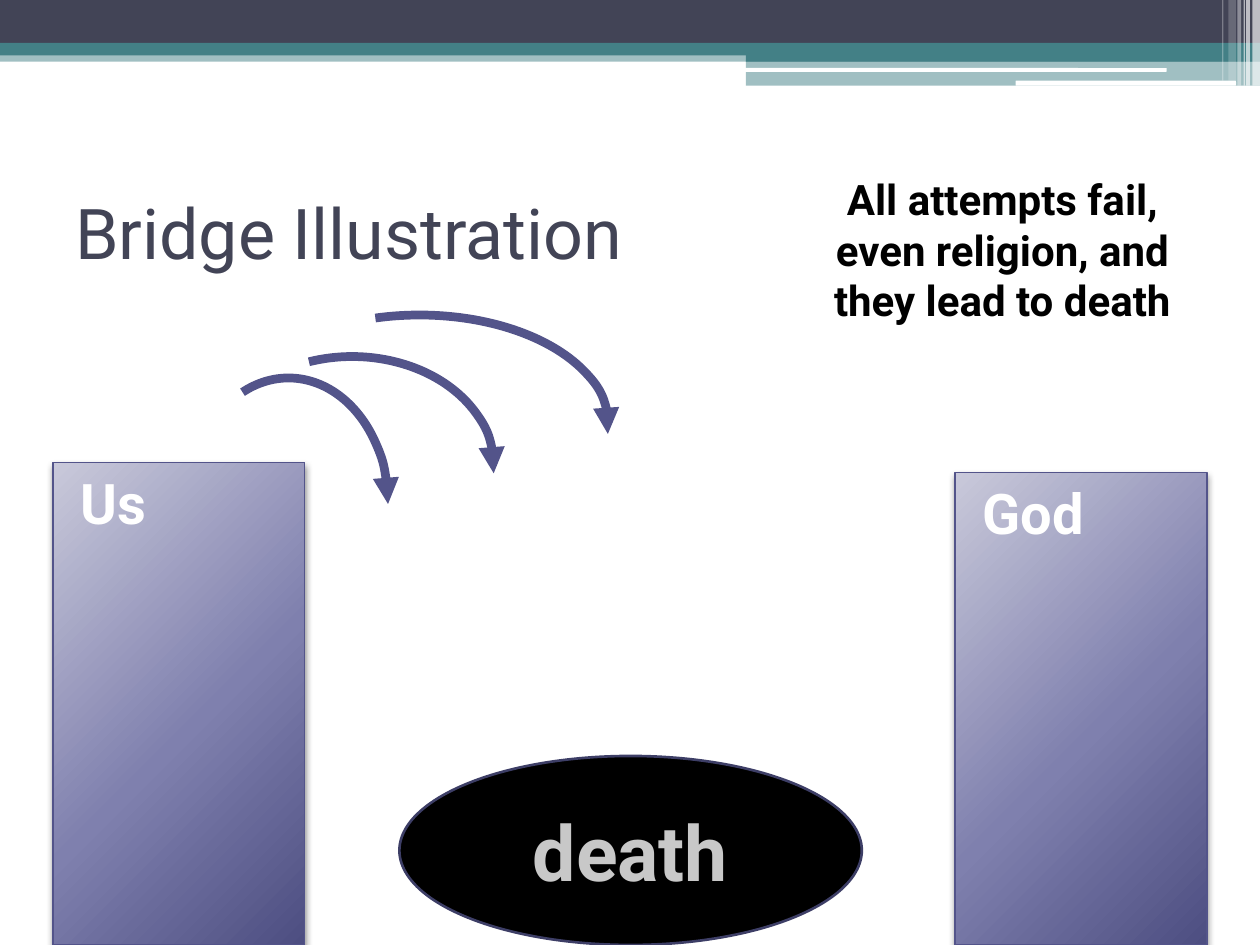
from typing import NamedTuple
from lxml.etree import SubElement
from pptx import Presentation
from pptx.dml.color import RGBColor
from pptx.enum.shapes import MSO_SHAPE as Shape
from pptx.enum.text import MSO_ANCHOR as Anchor, PP_ALIGN as Align
from pptx.oxml import parse_xml
from pptx.oxml.ns import nsdecls, qn
from pptx.util import Inches, Pt

FONT = "Roboto"
HEX = {
    "white": "FFFFFF", "black": "000000", "navy": "424456", "teal": "438086",
    "pale": "C9C9DA", "mid": "7F80AE", "deep": "4D4E81", "edge": "53548A",
    "rim": "3D3E66", "grey": "C8C8C8",
}


class Box(NamedTuple):
    left: float
    top: float
    width: float
    height: float


class Band(NamedTuple):
    box: Box
    color: str
    alpha: int = 100
    kind: Shape = Shape.RECTANGLE


class Arc(NamedTuple):
    box: Box
    end: float


class Cliff(NamedTuple):
    box: Box
    label: str


BANDS = [
    Band(Box(0, 0.4, 10, 0.09), "teal", 50),
    Band(Box(0, 0, 10, 0.34), "navy"),
    Band(Box(0, 0.34, 10, 0.1), "teal"),
    Band(Box(5.92, 0.39, 4.08, 0.1), "teal"),
    Band(Box(5.92, 0.48, 4.08, 0.2), "teal", 50),
    Band(Box(5.91, 0.54, 3.35, 0.03), "white", kind=Shape.ROUNDED_RECTANGLE),
    Band(Box(8.06, 0.64, 1.75, 0.04), "white", kind=Shape.ROUNDED_RECTANGLE),
    Band(Box(9.94, 0, 0.06, 0.68), "white", 65),
    Band(Box(9.89, 0, 0.03, 0.68), "white", 65),
    Band(Box(9.87, 0, 0.01, 0.68), "white", 60),
    Band(Box(9.82, 0, 0.03, 0.68), "white", 40),
    Band(Box(9.75, 0, 0.06, 0.64), "white", 20),
    Band(Box(9.7, 0, 0.01, 0.64), "white", 30),
]
CLIFFS = [
    Cliff(Box(0.42, 3.67, 2, 3.83), "Us"),
    Cliff(Box(7.58, 3.75, 2, 3.75), "God"),
]
ARCS = [
    Arc(Box(1.5, 3, 1.58, 2), 0),
    Arc(Box(1.67, 2.83, 2.25, 1.75), 1.58),
    Arc(Box(1.83, 2.5, 3, 1.75), 1.58),
]


def rgb(name: str) -> RGBColor:
    return RGBColor.from_string(HEX[name])


def add_shape(slide, kind: Shape, box: Box, fill: str = "", line: str = "",
              weight: float = 0):
    shape = slide.shapes.add_shape(kind, *map(Inches, box))
    shape.shadow.inherit = False
    if fill:
        shape.fill.solid()
        shape.fill.fore_color.rgb = rgb(fill)
    else:
        shape.fill.background()
    if line:
        shape.line.color.rgb = rgb(line)
        shape.line.width = Pt(weight)
    else:
        shape.line.fill.background()
    return shape


def set_text(shape, text: str, size: int, color: str, bold: bool = True,
             align: Align = Align.LEFT, anchor: Anchor = Anchor.TOP):
    frame = shape.text_frame
    frame.word_wrap = True
    frame.vertical_anchor = anchor
    para = frame.paragraphs[0]
    para.text = text
    para.alignment = align
    font = para.font
    font.name, font.size, font.bold = FONT, Pt(size), bold
    font.color.rgb = rgb(color)
    return para


def add_text(slide, box: Box, text: str, size: int, color: str, **style):
    label = slide.shapes.add_textbox(*map(Inches, box))
    set_text(label, text, size, color, **style)


def add_band(slide, band: Band):
    shape = add_shape(slide, band.kind, band.box, band.color)
    if band.alpha < 100:
        tint = shape.fill._xPr.find(".//" + qn("a:srgbClr"))
        SubElement(tint, qn("a:alpha"), val=str(band.alpha * 1000))


def add_cliff(slide, cliff: Cliff):
    shape = add_shape(slide, Shape.RECTANGLE, cliff.box, "mid", "edge", 0.75)
    props = shape._element.spPr
    stops = "".join(
        f'<a:gs pos="{pos * 1000}"><a:srgbClr val="{HEX[name]}"/></a:gs>'
        for pos, name in ((0, "pale"), (55, "mid"), (100, "deep")))
    props.replace(props.find(qn("a:solidFill")), parse_xml(
        f'<a:gradFill {nsdecls("a")} rotWithShape="1"><a:gsLst>{stops}</a:gsLst>'
        '<a:path path="circle"><a:fillToRect l="-40000" t="-90000" '
        'r="140000" b="190000"/></a:path></a:gradFill>'))
    props.find(qn("a:effectLst")).append(parse_xml(
        f'<a:outerShdw {nsdecls("a")} blurRad="{Pt(4)}" dist="{Pt(2)}" '
        f'dir="5400000" rotWithShape="0"><a:srgbClr val="{HEX["black"]}">'
        '<a:alpha val="45000"/></a:srgbClr></a:outerShdw>'))
    para = set_text(shape, cliff.label, 32, "white")
    para.space_before = Pt(3)
    indent = para._p.get_or_add_pPr()
    indent.set("marL", str(Inches(0.4)))
    indent.set("indent", str(Inches(-0.28)))


def add_arc(slide, arc: Arc):
    shape = add_shape(slide, Shape.ARC, arc.box, line="edge", weight=5)
    shape.adjustments[0] = 148.58
    shape.adjustments[1] = arc.end
    SubElement(shape.line._get_or_add_ln(), qn("a:tailEnd"), type="triangle")


def main():
    deck = Presentation()
    deck.slide_width, deck.slide_height = Inches(10), Inches(7.5)
    slide = deck.slides.add_slide(deck.slide_layouts[6])
    for band in BANDS:
        add_band(slide, band)
    add_text(slide, Box(0.5, 1.25, 9, 1.17), "Bridge Illustration", 40, "navy",
             bold=False, anchor=Anchor.MIDDLE)
    for cliff in CLIFFS:
        add_cliff(slide, cliff)
    for arc in ARCS:
        add_arc(slide, arc)
    death = add_shape(slide, Shape.OVAL, Box(3.17, 6, 3.67, 1.5), "black",
                      "rim", 1.5)
    set_text(death, "death", 44, "grey", align=Align.CENTER,
             anchor=Anchor.MIDDLE)
    add_text(slide, Box(6.33, 1.33, 3.25, 1.31),
             "All attempts fail, even religion, and they lead to death",
             24, "black", align=Align.CENTER)
    deck.save("out.pptx")


if __name__ == "__main__":
    main()
